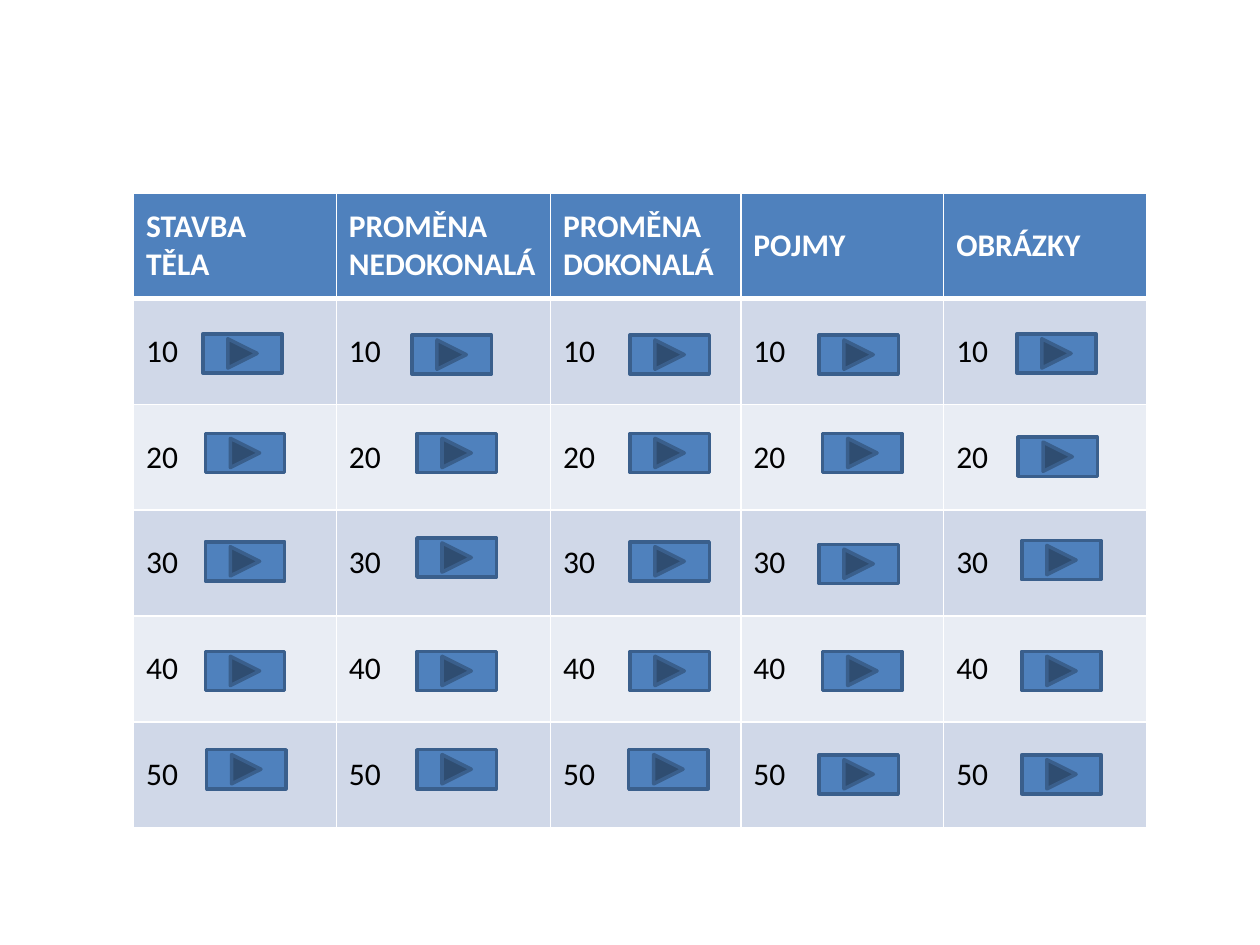
from lxml.etree import SubElement
from pptx import Presentation
from pptx.dml.color import RGBColor
from pptx.enum.shapes import MSO_SHAPE
from pptx.enum.text import MSO_ANCHOR
from pptx.oxml.ns import qn
from pptx.util import Inches, Pt

BLUE, DARK_BLUE, WHITE, BLACK = "4F81BD", "3A5F8C", "FFFFFF", "000000"
BANDS = ["D0D8E8", "E9EDF4"]

HEADERS = ["STAVBA\nTĚLA", "PROMĚNA NEDOKONALÁ", "PROMĚNA DOKONALÁ", "POJMY", "OBRÁZKY"]
POINTS = [10, 20, 30, 40, 50]
COL_WIDTHS = [1.61, 1.7, 1.51, 1.61, 1.61]
ROW_HEIGHT = 0.84

# Hand-placed buttons: left and top for each category, from 10 to 50 points
BUTTONS = [
    [(1.61, 2.65), (1.63, 3.44), (1.63, 4.3), (1.63, 5.17), (1.64, 5.95)],
    [(3.27, 2.66), (3.31, 3.44), (3.31, 4.27), (3.31, 5.17), (3.31, 5.95)],
    [(5, 2.66), (5, 3.44), (5, 4.3), (5, 5.17), (4.99, 5.95)],
    [(6.5, 2.66), (6.53, 3.44), (6.5, 4.32), (6.53, 5.17), (6.5, 5.99)],
    [(8.07, 2.65), (8.08, 3.47), (8.11, 4.29), (8.11, 5.17), (8.11, 5.99)],
]


def rgb(color):
    return RGBColor.from_string(color)


def set_fill(target, color):
    target.fill.solid()
    target.fill.fore_color.rgb = rgb(color)


def write_text(tf, text, size=18, color=BLACK, bold=False, font="Calibri"):
    for i, line in enumerate(text.split("\n")):
        p = tf.paragraphs[0] if i == 0 else tf.add_paragraph()
        r = p.add_run()
        r.text = line
        r.font.name, r.font.size, r.font.bold = font, Pt(size), bold
        r.font.color.rgb = rgb(color)


def set_borders(cell, top=1, bottom=1, color=WHITE):
    tcPr = cell._tc.get_or_add_tcPr()
    for side, width in (("L", 1), ("R", 1), ("T", top), ("B", bottom)):
        ln = SubElement(tcPr, qn(f"a:ln{side}"), w=str(Pt(width)))
        fill = SubElement(ln, qn("a:solidFill"))
        SubElement(fill, qn("a:srgbClr"), val=color)


def format_cell(cell, text, fill, top=1, bottom=1, **font):
    cell.vertical_anchor = MSO_ANCHOR.MIDDLE
    set_borders(cell, top, bottom)  # borders come before the fill in the XML
    set_fill(cell, fill)
    write_text(cell.text_frame, text, **font)


def add_board(s):
    rows = len(POINTS) + 1
    table = s.shapes.add_table(
        rows, len(HEADERS), Inches(1.06), Inches(1.53),
        Inches(sum(COL_WIDTHS)), Inches(rows * ROW_HEIGHT)).table
    for row in table.rows:
        row.height = Inches(ROW_HEIGHT)
    for c, (header, width) in enumerate(zip(HEADERS, COL_WIDTHS)):
        table.columns[c].width = Inches(width)
        format_cell(table.cell(0, c), header, BLUE, bottom=3, color=WHITE, bold=True)
        for i, points in enumerate(POINTS):
            format_cell(table.cell(i + 1, c), str(points), BANDS[i % 2],
                        top=3 if i == 0 else 1)


def add_button(s, left, top):
    sp = s.shapes.add_shape(MSO_SHAPE.ACTION_BUTTON_FORWARD_OR_NEXT,
                            Inches(left), Inches(top), Inches(0.63), Inches(0.31))
    sp.shadow.inherit = False
    set_fill(sp, BLUE)
    sp.line.color.rgb = rgb(DARK_BLUE)
    sp.line.width = Pt(2)


def main():
    prs = Presentation()
    prs.slide_width, prs.slide_height = Inches(10), Inches(7.5)
    s = prs.slides.add_slide(prs.slide_layouts[6])

    # Quiz board
    add_board(s)

    # Question buttons
    for column in BUTTONS:
        for left, top in column:
            add_button(s, left, top)

    prs.save("out.pptx")


if __name__ == "__main__":
    main()
